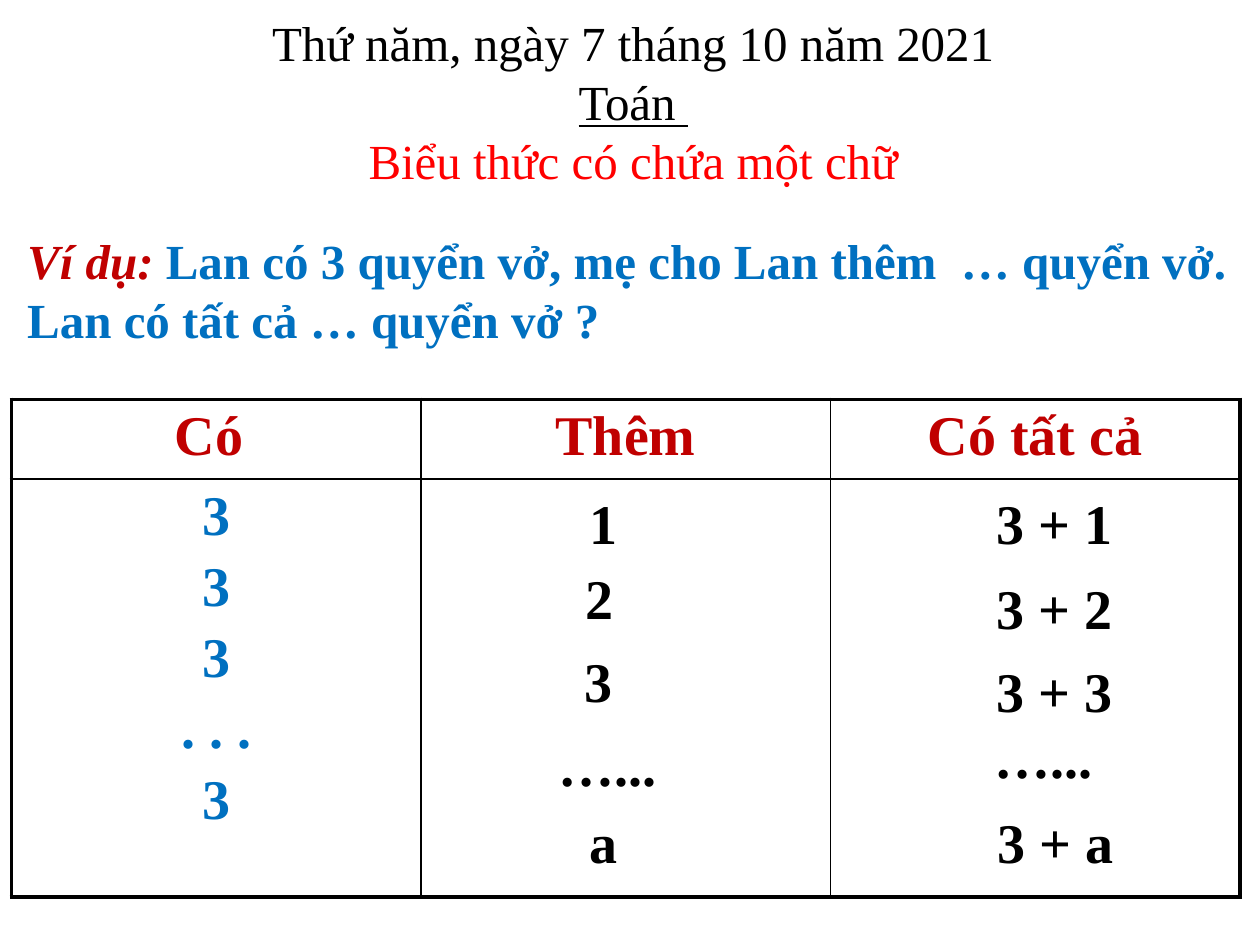
from lxml import etree
from pptx import Presentation
from pptx.dml.color import RGBColor
from pptx.enum.text import MSO_ANCHOR, MSO_AUTO_SIZE, PP_ALIGN
from pptx.oxml.ns import qn
from pptx.util import Cm, Pt

CENTER = PP_ALIGN.CENTER
TOP = MSO_ANCHOR.TOP
NO_AUTOFIT = MSO_AUTO_SIZE.NONE

BLACK = RGBColor(0x00, 0x00, 0x00)
WHITE = RGBColor(0xFF, 0xFF, 0xFF)
RED = RGBColor(0xFF, 0x00, 0x00)
DARK_RED = RGBColor(0xC0, 0x00, 0x00)
BLUE = RGBColor(0x00, 0x70, 0xC0)

FONT = "Times New Roman"
TEXT_SIZE = Pt(28)
TABLE_SIZE = Pt(32)
THICK, THIN = Pt(2.25), Pt(1)

HEADERS = ["Có ", "Thêm", "Có tất cả"]
OWNED = ["3", "3", "3", ". . .", "3"]

# Text, left and top in centimetres
ANSWERS = [
    ("1", 11.63, 9.73), ("3 + 1", 19.84, 9.73),
    ("2", 11.56, 11.23), ("3 + 2", 19.84, 11.43),
    ("3", 11.53, 12.9), ("3 + 3", 19.84, 13.11),
    ("…...", 11.0, 14.61), ("…...", 19.79, 14.45),
    ("a", 11.63, 16.15), ("3 + a", 19.86, 16.15),
]


def add_span(para, text, size, color, bold=False, italic=False, underline=False):
    span = para.add_run()
    span.text = text
    font = span.font
    font.name, font.size = FONT, size
    font.bold, font.italic, font.underline = bold, italic, underline
    font.color.rgb = color


def add_text_box(page, left, top, width, height):
    """Add a wrapping text box and return its first paragraph."""
    box = page.shapes.add_textbox(Cm(left), Cm(top), Cm(width), Cm(height))
    box.text_frame.word_wrap = True
    return box.text_frame.paragraphs[0]


def fill_title(title):
    title.left, title.top = Cm(5.16), Cm(0.13)
    title.width, title.height = Cm(15.21), Cm(3.84)
    frame = title.text_frame
    frame.auto_size = NO_AUTOFIT
    frame.vertical_anchor = TOP
    lines = [
        ("Thứ năm, ngày 7 tháng 10 năm 2021", BLACK, False),
        ("Toán ", BLACK, True),
        ("Biểu thức có chứa một chữ", RED, False),
    ]
    for index, (text, color, underline) in enumerate(lines):
        para = frame.add_paragraph() if index else frame.paragraphs[0]
        para.alignment = CENTER
        add_span(para, text, TEXT_SIZE, color, underline=underline)


def add_example(page):
    para = add_text_box(page, 0.3, 4.52, 24.77, 2.64)
    add_span(para, "Ví dụ: ", TEXT_SIZE, DARK_RED, bold=True, italic=True)
    add_span(
        para,
        "Lan có 3 quyển vở, mẹ cho Lan thêm  … quyển vở. "
        "Lan có tất cả … quyển vở ?",
        TEXT_SIZE, BLUE, bold=True,
    )


def set_borders(cell, widths):
    """Draw black borders; widths maps L, R, T and B, in that order."""
    properties = cell._tc.get_or_add_tcPr()
    for index, (side, width) in enumerate(widths.items()):
        line = etree.Element(qn(f"a:ln{side}"), w=str(width))
        fill = etree.SubElement(line, qn("a:solidFill"))
        etree.SubElement(fill, qn("a:srgbClr"), val=str(BLACK))
        properties.insert(index, line)


def write_cell(cell, lines, color):
    for index, text in enumerate(lines):
        para = cell.text_frame.add_paragraph() if index else cell.text_frame.paragraphs[0]
        para.alignment = CENTER
        if index:
            para.space_before = Pt(5)
        add_span(para, text, TABLE_SIZE, color, bold=True)


def add_sum_table(page):
    table = page.shapes.add_table(
        2, 3, Cm(0.23), Cm(8.05), Cm(24.77), Cm(10)
    ).table
    table.first_row = table.horz_banding = False
    table.rows[0].height, table.rows[1].height = Cm(1.58), Cm(8.42)
    for column, header in enumerate(HEADERS):
        write_cell(table.cell(0, column), [header], DARK_RED)
    write_cell(table.cell(1, 0), OWNED, BLUE)

    for row in range(2):
        for column in range(3):
            cell = table.cell(row, column)
            cell.fill.solid()
            cell.fill.fore_color.rgb = WHITE
            set_borders(cell, {
                "L": THICK if column == 0 else THIN,
                "R": THICK if column == 2 else THIN,
                "T": THICK if row == 0 else THIN,
                "B": THICK if row == 1 else THIN,
            })


def add_answers(page):
    for text, left, top in ANSWERS:
        width = 3.65 if "+" in text else 2.74
        para = add_text_box(page, left, top, width, 1.62)
        add_span(para, text, TABLE_SIZE, BLACK, bold=True)


def main():
    deck = Presentation()
    deck.slide_width, deck.slide_height = Cm(25.4), Cm(19.05)
    page = deck.slides.add_slide(deck.slide_layouts.get_by_name("Title Only"))
    fill_title(page.shapes.title)
    add_example(page)
    add_sum_table(page)
    add_answers(page)
    deck.save("out.pptx")


if __name__ == "__main__":
    main()
